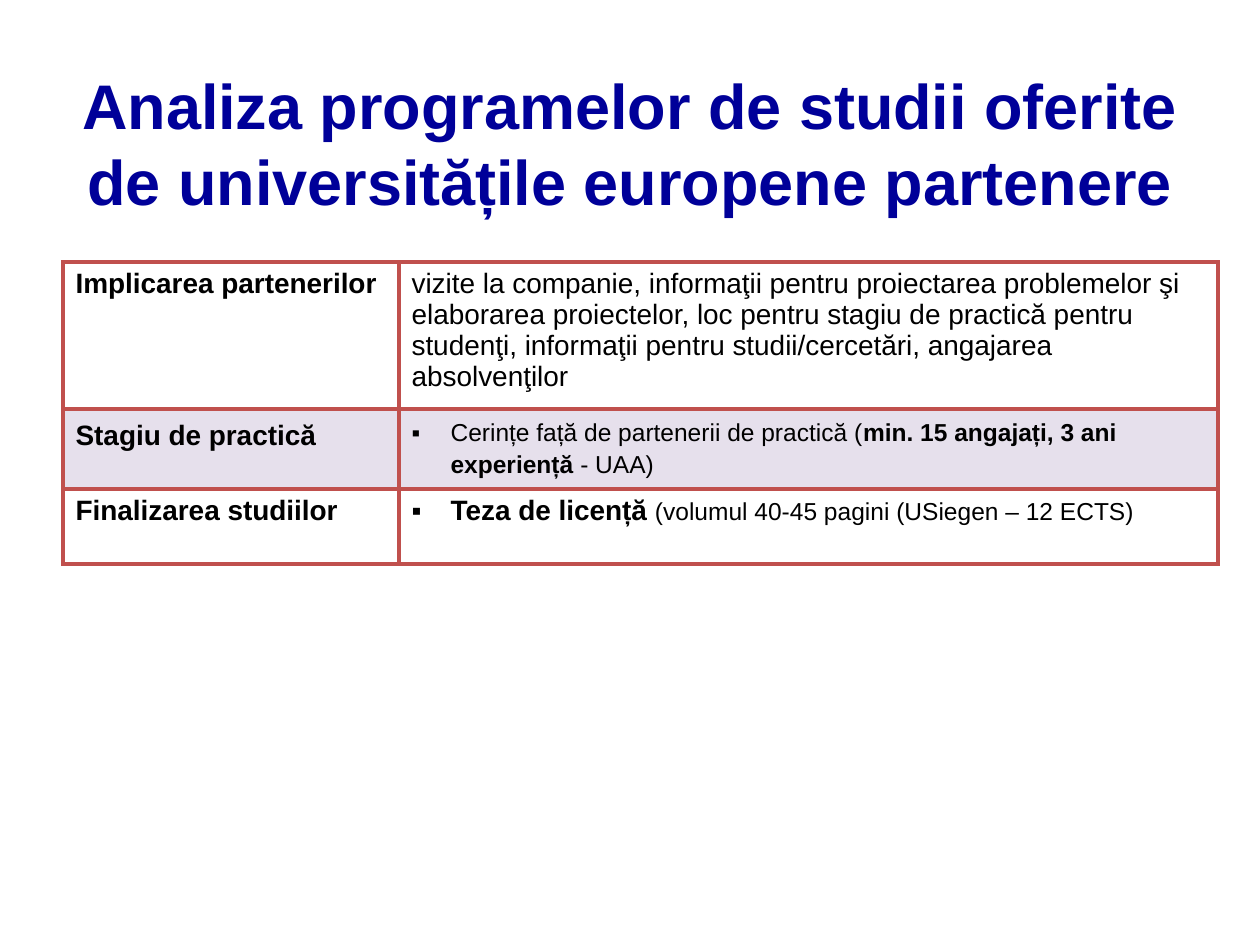
from lxml import etree
from pptx import Presentation, util as u
from pptx.dml.color import RGBColor
from pptx.enum import text as t
from pptx.oxml.ns import qn

PX = 914400 // 126  # EMU per px
HUES = {"title": "000099", "ink": "000000", "line": "C0504D",
        "plain": "FFFFFF", "band": "E6E0EC"}
COLS = [336, 819]
ROWS = [  # height, fill, line spacing, label, bulleted, body runs (text, size, bold)
    (137, "plain", None, "Implicarea partenerilor", False,
     [("vizite la companie, informaţii pentru proiectarea problemelor şi "
       "elaborarea proiectelor, loc pentru stagiu de practică pentru studenţi, "
       "informaţii pentru studii/cercetări, angajarea absolvenţilor", 16, False)]),
    (79, "band", 1.15, "Stagiu de practică", True,
     [("Cerințe față de partenerii de practică (", 14, False),
      ("min. 15 angajați, 3 ani experiență ", 14, True),
      ("- UAA)", 14, False)]),
    (75, "plain", None, "Finalizarea studiilor", True,
     [("Teza de licență ", 16, True),
      ("(volumul 40-45 pagini (USiegen – 12 ECTS)", 14, False)]),
]


def px(n):
    return u.Emu(n * PX)


def rgb(name):
    return RGBColor.from_string(HUES[name])


def write(frame, runs, hue="ink", align=t.PP_ALIGN.LEFT, gap=None, bullet=False):
    """Fill the first paragraph with (text, size, bold) runs."""
    para = frame.paragraphs[0]
    para.alignment = align
    if gap:
        para.line_spacing = gap
    if bullet:
        props = para._p.get_or_add_pPr()
        props.set("marL", str(px(39)))
        props.set("indent", str(-px(39)))
        etree.SubElement(props, qn("a:buFont"), typeface="Arial")
        etree.SubElement(props, qn("a:buChar"), char="▪")
    for words, size, bold in runs:
        run = para.add_run()
        run.text = words
        run.font.name = "Arial"
        run.font.size = u.Pt(size)
        run.font.bold = bold
        run.font.color.rgb = rgb(hue)


def edge(cell):
    """Draw all four borders of a cell."""
    props = cell._tc.get_or_add_tcPr()
    for side in ("lnL", "lnR", "lnT", "lnB"):
        line = etree.SubElement(props, qn("a:" + side), w=str(u.Pt(2.25)))
        fill = etree.SubElement(line, qn("a:solidFill"))
        etree.SubElement(fill, qn("a:srgbClr"), val=HUES["line"])


def title(slide, x, y, w, h):
    frame = slide.shapes.add_textbox(px(x), px(y), px(w), px(h)).text_frame
    frame.word_wrap = True
    frame.vertical_anchor = t.MSO_ANCHOR.MIDDLE
    write(frame, [("Analiza programelor de studii oferite de universitățile "
                   "europene partenere", 36, True)],
          hue="title", align=t.PP_ALIGN.CENTER)


def grid(slide, x, y):
    high = sum(row[0] for row in ROWS)
    table = slide.shapes.add_table(len(ROWS), len(COLS), px(x), px(y),
                                   px(sum(COLS)), px(high)).table
    table.first_row = table.horz_banding = False
    for col, wide in zip(table.columns, COLS):
        col.width = px(wide)
    for r, (tall, fill, gap, label, bullet, body) in enumerate(ROWS):
        table.rows[r].height = px(tall)
        left, right = table.cell(r, 0), table.cell(r, 1)
        for cell in (left, right):
            edge(cell)
            cell.fill.solid()
            cell.fill.fore_color.rgb = rgb(fill)
        write(left.text_frame, [(label, 16, True)], gap=gap)
        write(right.text_frame, body, gap=gap, bullet=bullet)


def main():
    deck = Presentation()
    deck.slide_width, deck.slide_height = px(1260), px(945)
    slide = deck.slides.add_slide(deck.slide_layouts[6])
    title(slide, 63, 63, 1134, 158)
    grid(slide, 63, 262)
    deck.save("out.pptx")


if __name__ == "__main__":
    main()
